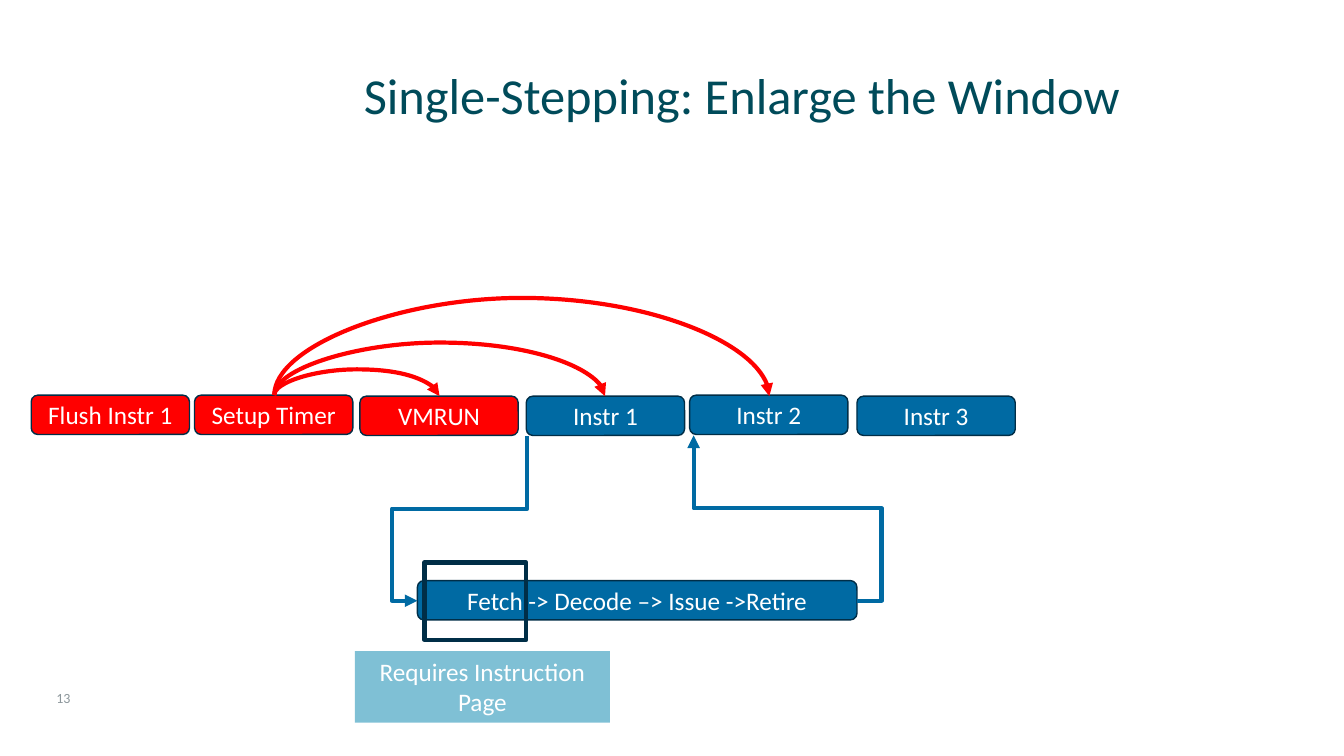
from dataclasses import dataclass

import lxml.etree
import pptx
import pptx.dml.color
import pptx.enum.shapes
import pptx.enum.text
import pptx.oxml.ns
import pptx.util

Inches = pptx.util.Inches
Shape = pptx.enum.shapes.MSO_SHAPE
Connector = pptx.enum.shapes.MSO_CONNECTOR
Anchor = pptx.enum.text.MSO_ANCHOR
Align = pptx.enum.text.PP_ALIGN
qn = pptx.oxml.ns.qn

FONT = "Calibri"
COLORS = {
    "title": "004B5A",
    "number": "8C969B",
    "guest": "006AA3",
    "attack": "FF0000",
    "outline": "002E47",
    "note": "0083AD",
    "white": "FFFFFF",
}
BOX_HEIGHT = 0.39
STEP_WIDTH = 1.57
TIMER_X = 2.72
STEP_TOP = 3.92
ARC_DROP = 0.01


@dataclass
class Box:
    text: str
    left: float
    top: float
    width: float = STEP_WIDTH
    height: float = BOX_HEIGHT
    fill: str | None = "guest"
    line: str | None = "outline"
    line_width: float = 1
    preset: Shape = Shape.ROUNDED_RECTANGLE
    anchor: Anchor = Anchor.MIDDLE
    opacity: int = 100


@dataclass
class Label:
    text: str
    left: float
    top: float
    width: float
    height: float
    size: float
    color: str


@dataclass
class Route:
    begin: tuple[float, float]
    end: tuple[float, float]
    color: str
    kind: Connector
    preset: str
    adjustments: list[float]  # fractions of the unrotated frame
    rotation: int = 0
    flip_horizontal: bool = False
    flip_vertical: bool = False


def timer_arc(target_x: float, rise: float) -> Route:
    return Route((TIMER_X, STEP_TOP), (target_x, STEP_TOP + ARC_DROP), "attack",
                 Connector.CURVE, "curvedConnector3", [-rise / ARC_DROP], 270, True)


LABELS = [
    Label("13", 0.46, 6.8, 0.49, 0.25, 10, "number"),
    Label("Single-Stepping: Enlarge the Window", 3.51, 0.45, 8.89, 0.98, 36, "title"),
]
BOXES = [
    Box("Flush Instr 1", 0.31, 3.92, fill="attack"),
    Box("Setup Timer", 1.93, 3.92, fill="attack"),
    Box("VMRUN", 3.57, 3.93, fill="attack"),
    Box("Instr 1", 5.22, 3.93),
    Box("Instr 2", 6.84, 3.92),
    Box("Instr 3", 8.5, 3.93),
    Box("Fetch -> Decode –> Issue ->Retire", 4.14, 5.76, 4.36),
]
ROUTES = [
    timer_arc(6, 0.53),
    timer_arc(4.36, 0.26),
    timer_arc(7.63, 0.98),
    Route((5.23, 4.33), (4.14, 5.96), "guest", Connector.ELBOW, "bentConnector4",
          [0.44, 1.23], 90),
    Route((8.5, 5.96), (6.88, 4.32), "guest", Connector.ELBOW, "bentConnector4",
          [-0.15, 0.56], 0, True, True),
]
CALLOUTS = [
    Box("", 4.21, 5.58, 1.01, 0.77, fill=None, line_width=3, preset=Shape.RECTANGLE),
    Box("Requires Instruction Page", 3.52, 6.46, 2.53, 0.71, fill="note", line=None,
        preset=Shape.RECTANGLE, anchor=Anchor.TOP, opacity=50),
]


def rgb(name: str) -> pptx.dml.color.RGBColor:
    return pptx.dml.color.RGBColor.from_string(COLORS[name])


def write(text_frame, text: str, size: float, color: str, anchor: Anchor, align: Align) -> None:
    text_frame.word_wrap = True
    text_frame.vertical_anchor = anchor
    text_frame.text = text
    paragraph = text_frame.paragraphs[0]
    paragraph.alignment = align
    for run in paragraph.runs:
        run.font.name = FONT
        run.font.size = pptx.util.Pt(size)
        run.font.color.rgb = rgb(color)


def draw_label(slide, label: Label) -> None:
    shape = slide.shapes.add_textbox(Inches(label.left), Inches(label.top),
                                     Inches(label.width), Inches(label.height))
    write(shape.text_frame, label.text, label.size, label.color, Anchor.MIDDLE, Align.LEFT)


def draw_box(slide, box: Box) -> None:
    shape = slide.shapes.add_shape(box.preset, Inches(box.left), Inches(box.top),
                                   Inches(box.width), Inches(box.height))
    shape.shadow.inherit = False
    if box.fill:
        shape.fill.solid()
        shape.fill.fore_color.rgb = rgb(box.fill)
        if box.opacity < 100:
            color = shape.fill._xPr.find(".//" + qn("a:srgbClr"))
            lxml.etree.SubElement(color, qn("a:alpha"), val=str(box.opacity * 1000))
    else:
        shape.fill.background()
    if box.line:
        shape.line.color.rgb = rgb(box.line)
        shape.line.width = pptx.util.Pt(box.line_width)
    else:
        shape.line.fill.background()
    if box.text:
        write(shape.text_frame, box.text, 18, "white", box.anchor, Align.CENTER)


def draw_route(slide, route: Route) -> None:
    # The frame before rotation shares its centre with the drawn route
    (x1, y1), (x2, y2) = route.begin, route.end
    width, height = abs(x2 - x1), abs(y2 - y1)
    if route.rotation in (90, 270):
        width, height = height, width
    left, top = (x1 + x2 - width) / 2, (y1 + y2 - height) / 2
    xs, ys = [left, left + width], [top, top + height]
    if route.flip_horizontal:
        xs.reverse()
    if route.flip_vertical:
        ys.reverse()
    connector = slide.shapes.add_connector(route.kind, Inches(xs[0]), Inches(ys[0]),
                                           Inches(xs[1]), Inches(ys[1]))
    connector.line.color.rgb = rgb(route.color)
    connector.line.width = pptx.util.Pt(3)

    # Rotation, bends, arrowhead and no shadow
    properties = connector._element.spPr
    if route.rotation:
        properties.find(qn("a:xfrm")).set("rot", str(route.rotation * 60000))
    geometry = properties.find(qn("a:prstGeom"))
    geometry.set("prst", route.preset)
    guides = geometry.find(qn("a:avLst"))
    if guides is None:
        guides = lxml.etree.SubElement(geometry, qn("a:avLst"))
    for number, fraction in enumerate(route.adjustments, 1):
        lxml.etree.SubElement(guides, qn("a:gd"), name=f"adj{number}",
                              fmla=f"val {round(fraction * 100000)}")
    lxml.etree.SubElement(properties.find(qn("a:ln")), qn("a:tailEnd"), type="triangle")
    lxml.etree.SubElement(properties, qn("a:effectLst"))


def main() -> None:
    presentation = pptx.Presentation()
    presentation.slide_width = Inches(13.33)
    presentation.slide_height = Inches(7.5)
    slide = presentation.slides.add_slide(presentation.slide_layouts[6])
    for label in LABELS:
        draw_label(slide, label)
    for box in BOXES:
        draw_box(slide, box)
    for route in ROUTES:
        draw_route(slide, route)
    for callout in CALLOUTS:
        draw_box(slide, callout)
    presentation.save("out.pptx")


if __name__ == "__main__":
    main()
